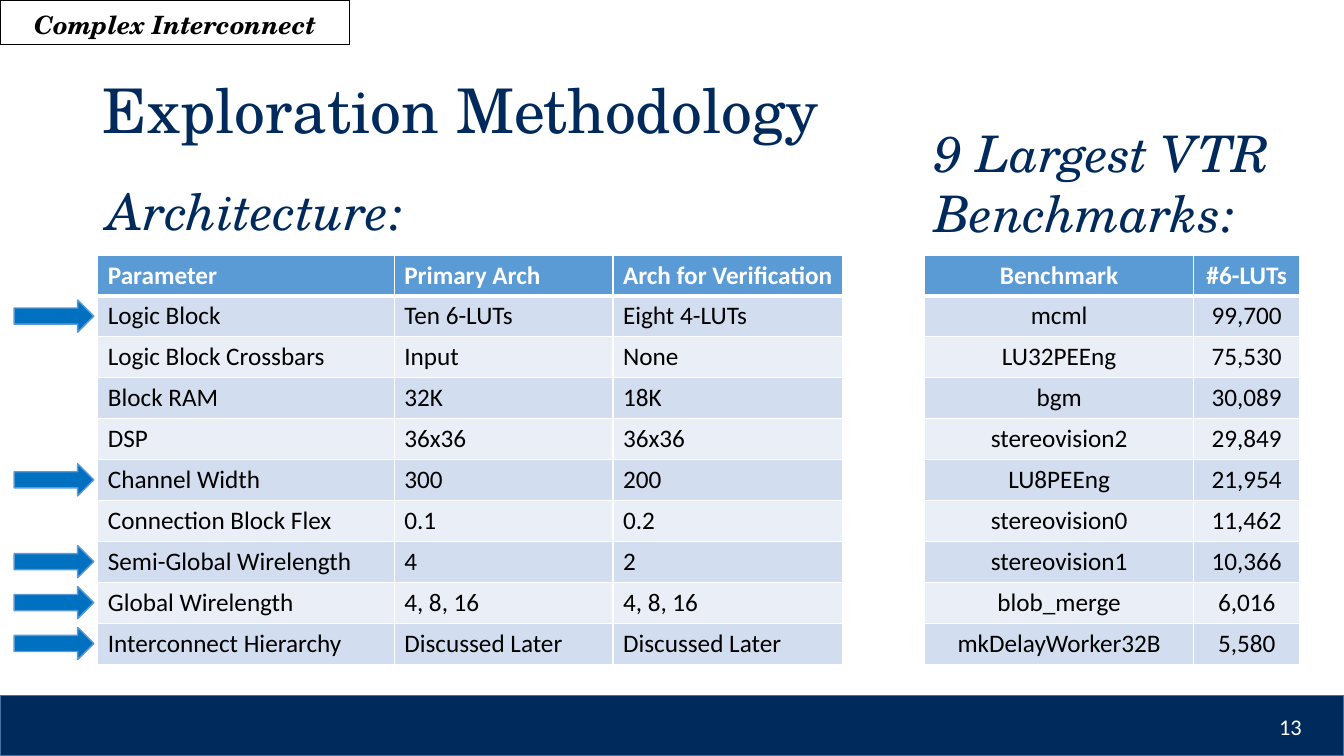
from lxml.etree import SubElement
from pptx import Presentation
from pptx.dml.color import RGBColor
from pptx.enum.shapes import MSO_SHAPE
from pptx.enum.text import MSO_ANCHOR, PP_ALIGN
from pptx.oxml.ns import qn
from pptx.util import Inches, Pt

NAVY, WHITE, BLACK, SKY = "002A5C", "FFFFFF", "000000", "5B9BD5"
SERIF, SANS = "TeX Gyre Schola", "Calibri"
TABLE_TOP, ROW_HEIGHT = 2.53, 0.406


def paint(color_format, hex_color):
    color_format.rgb = RGBColor.from_string(hex_color)


def write(frame, text, size, face, hex_color, bold=False, italic=False, align=PP_ALIGN.LEFT):
    frame.word_wrap = True
    para = frame.paragraphs[0]
    para.alignment = align
    span = para.add_run()
    span.text = text
    span.font.size = Pt(size)
    span.font.name = face
    span.font.bold = bold
    span.font.italic = italic
    paint(span.font.color, hex_color)
    return para


deck = Presentation()
deck.slide_width, deck.slide_height = Inches(13.33), Inches(7.5)
page = deck.slides.add_slide(deck.slide_layouts[6])

header_row = 0
arrow_rows = [1, 5, 7, 8, 9]
shapes = [
    (MSO_SHAPE.RECTANGLE, 0, 6.9, 13.33, 0.6, NAVY, "43739E"),
    (MSO_SHAPE.RECTANGLE, 0, 0, 3.47, 0.44, None, BLACK),
]
for row in arrow_rows:
    arrow_top = TABLE_TOP + row * ROW_HEIGHT + 0.04
    shapes.append((MSO_SHAPE.RIGHT_ARROW, 0.14, arrow_top, 0.79, 0.32, "0070C0", SKY))

for kind, left, top, width, height, fill, line in shapes:
    shape = page.shapes.add_shape(kind, Inches(left), Inches(top), Inches(width), Inches(height))
    shape.shadow.inherit = False
    if fill:
        shape.fill.solid()
        paint(shape.fill.fore_color, fill)
    else:
        shape.fill.background()
    paint(shape.line.color, line)
    shape.line.width = Pt(1)

texts = [
    ("Exploration Methodology", 0.92, 0.4, 11.5, 1.45, 44, SERIF, NAVY, False, False, PP_ALIGN.LEFT, MSO_ANCHOR.MIDDLE),
    ("Complex Interconnect", 0.24, 0.04, 3.23, 0.4, 18, SERIF, BLACK, True, True, PP_ALIGN.LEFT, MSO_ANCHOR.TOP),
    ("Architecture:", 0.97, 1.74, 5.15, 0.71, 36, SERIF, NAVY, False, True, PP_ALIGN.LEFT, MSO_ANCHOR.TOP),
    ("9 Largest VTR Benchmarks:", 9.17, 1.16, 4.16, 1.31, 36, SERIF, NAVY, False, True, PP_ALIGN.LEFT, MSO_ANCHOR.TOP),
    ("13", 10.01, 7.01, 3, 0.4, 16, SANS, WHITE, False, False, PP_ALIGN.RIGHT, MSO_ANCHOR.MIDDLE),
]
for text, left, top, width, height, size, face, color, bold, italic, align, anchor in texts:
    box = page.shapes.add_textbox(Inches(left), Inches(top), Inches(width), Inches(height))
    box.text_frame.vertical_anchor = anchor
    para = write(box.text_frame, text, size, face, color, bold, italic, align)
    if size == 44:
        para.line_spacing = 0.9

benchmarks = [
    ("Benchmark", "#6-LUTs"),
    ("mcml", "99,700"),
    ("LU32PEEng", "75,530"),
    ("bgm", "30,089"),
    ("stereovision2", "29,849"),
    ("LU8PEEng", "21,954"),
    ("stereovision0", "11,462"),
    ("stereovision1", "10,366"),
    ("blob_merge", "6,016"),
    ("mkDelayWorker32B", "5,580"),
]
architecture = [
    ("Parameter", "Primary Arch", "Arch for Verification"),
    ("Logic Block", "Ten 6-LUTs", "Eight 4-LUTs"),
    ("Logic Block Crossbars", "Input", "None"),
    ("Block RAM", "32K", "18K"),
    ("DSP", "36x36", "36x36"),
    ("Channel Width", "300", "200"),
    ("Connection Block Flex", "0.1", "0.2"),
    ("Semi-Global Wirelength", "4", "2"),
    ("Global Wirelength", "4, 8, 16", "4, 8, 16"),
    ("Interconnect Hierarchy", "Discussed Later", "Discussed Later"),
]
tables = [
    (benchmarks, 9.17, [2.67, 1.05], PP_ALIGN.CENTER),
    (architecture, 0.97, [2.94, 2.17, 2.28], PP_ALIGN.LEFT),
]
for records, left, widths, align in tables:
    table = page.shapes.add_table(
        len(records), len(widths), Inches(left), Inches(TABLE_TOP),
        Inches(sum(widths)), Inches(ROW_HEIGHT * len(records)),
    ).table
    for column, width in zip(table.columns, widths):
        column.width = Inches(width)
    for row, record in enumerate(records):
        table.rows[row].height = Inches(ROW_HEIGHT)
        is_header = row == header_row
        fill = SKY if is_header else ("EAEFF7", "D2DEEF")[row % 2]
        for column, text in enumerate(record):
            cell = table.cell(row, column)
            write(cell.text_frame, text, 18, SANS, WHITE if is_header else BLACK, bold=is_header, align=align)
            properties = cell._tc.get_or_add_tcPr()
            for side in ("L", "R", "T", "B"):
                under_header = (row, side) in [(0, "B"), (1, "T")]
                border = SubElement(properties, qn(f"a:ln{side}"), w=str(Pt(3 if under_header else 1)))
                SubElement(SubElement(border, qn("a:solidFill")), qn("a:srgbClr"), val=WHITE)
            cell.fill.solid()
            paint(cell.fill.fore_color, fill)

deck.save("out.pptx")
